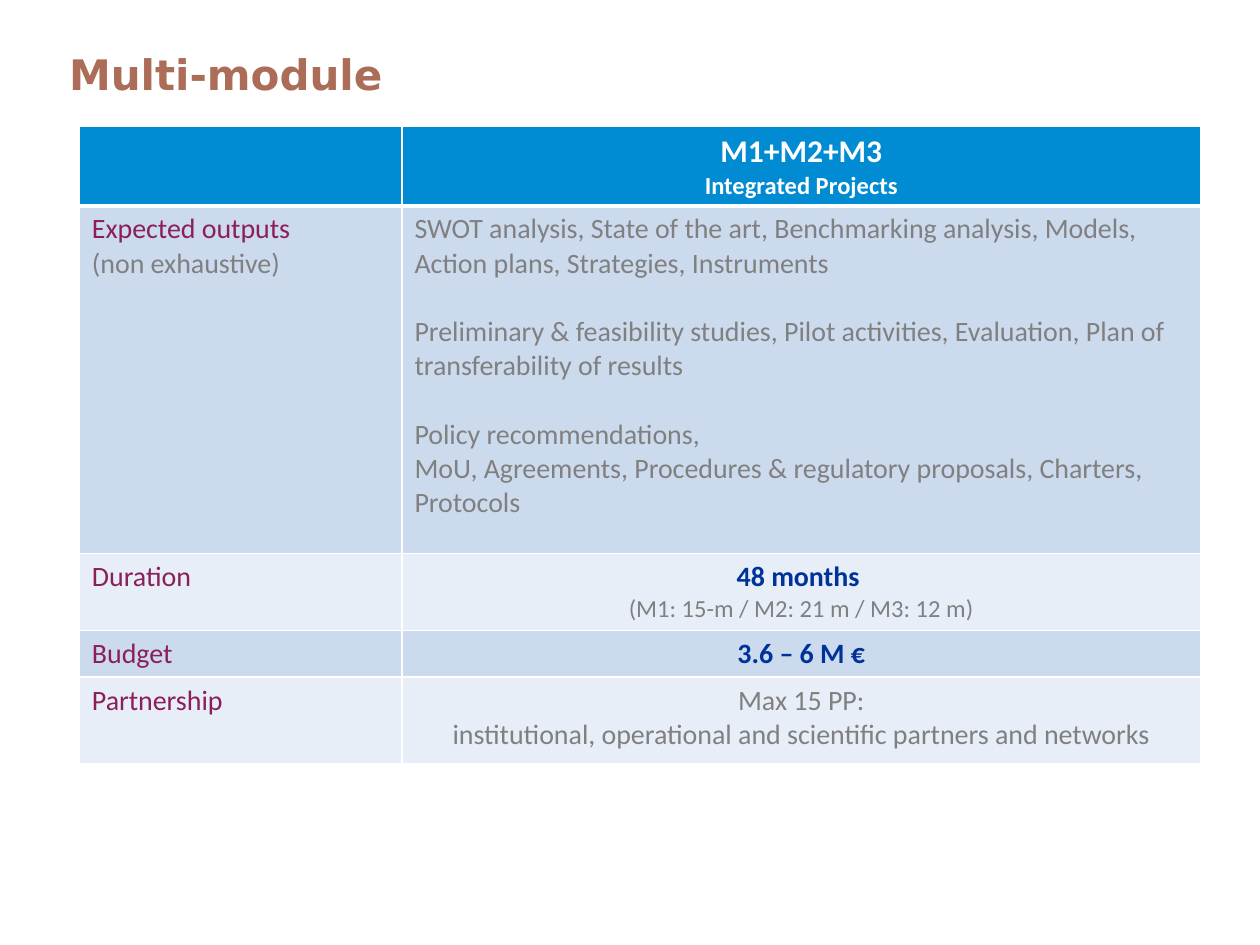
from pptx import Presentation
from pptx import util as u
from pptx.dml.color import RGBColor
from pptx.enum import text
from pptx.oxml.ns import qn
from lxml import etree

W, H = u.Inches(10), u.Inches(7.5)
WHITE = RGBColor(0xFF, 0xFF, 0xFF)
BROWN = RGBColor(0xAB, 0x6D, 0x58)
BLUE = RGBColor(0x00, 0x8B, 0xD2)
NAVY = RGBColor(0x00, 0x33, 0x99)
PLUM = RGBColor(0x8A, 0x1F, 0x5A)
GREY = RGBColor(0x80, 0x80, 0x80)
BANDS = (RGBColor(0xCC, 0xDA, 0xEE), RGBColor(0xE7, 0xEE, 0xF7))
COLUMNS = (2.56, 6.34)
ROWS = (0.63, 2.76, 0.61, 0.37, 0.69)
LINE = 19.5


def line(words, color=GREY, size=16, bold=False, gap=0):
    return words, color, size, bold, gap


HEADER = ([], [line("M1+M2+M3", WHITE, 18, True),
               line("Integrated Projects", WHITE, 14, True)])
OUTPUTS = [
    line("SWOT analysis, State of the art, Benchmarking analysis, Models, "
         "Action plans, Strategies, Instruments"),
    line("Preliminary & feasibility studies, Pilot activities, Evaluation, "
         "Plan of transferability of results", gap=LINE),
    line("Policy recommendations,", gap=LINE),
    line("MoU, Agreements, Procedures & regulatory proposals, Charters, Protocols"),
]
BODY = (
    ([line("Expected outputs", PLUM), line("(non exhaustive)")], OUTPUTS),
    ([line("Duration", PLUM)],
     [line("48 months ", NAVY, bold=True),
      line("(M1: 15-m / M2: 21 m / M3: 12 m)", size=14)]),
    ([line("Budget", PLUM)], [line("3.6 – 6 M €", NAVY, bold=True)]),
    ([line("Partnership", PLUM)],
     [line("Max 15 PP:"),
      line("institutional, operational and scientific partners and networks")]),
)


def write(tf, lines, align, font="Calibri"):
    for i, (words, color, size, bold, gap) in enumerate(lines):
        p = tf.paragraphs[0] if i == 0 else tf.add_paragraph()
        p.text = words
        p.alignment = align
        if gap:
            p.space_before = u.Pt(gap)
        f = p.runs[0].font
        f.name, f.size, f.bold = font, u.Pt(size), bold
        f.color.rgb = color


def add_border(cell, side, width):
    ln = etree.SubElement(cell._tc.get_or_add_tcPr(), qn(f"a:ln{side}"),
                          w=str(u.Pt(width)))
    fill = etree.SubElement(ln, qn("a:solidFill"))
    etree.SubElement(fill, qn("a:srgbClr"), val=str(WHITE))


def fill_cell(cell, lines, color, align, top, bottom):
    for side, width in zip("LRTB", (1, 1, top, bottom)):
        add_border(cell, side, width)
    cell.fill.solid()
    cell.fill.fore_color.rgb = color
    write(cell.text_frame, lines, align)


def add_title(s, words):
    tf = s.shapes.add_textbox(int(W * 0.045), int(H * 0.005),
                              int(W * 0.95), int(H * 0.12)).text_frame
    tf.word_wrap = True
    tf.vertical_anchor = text.MSO_ANCHOR.MIDDLE
    write(tf, [line(words, BROWN, 24, True)], text.PP_ALIGN.LEFT, "DejaVu Sans")
    tf.paragraphs[0].line_spacing = 1.5


def add_module_table(s):
    tbl = s.shapes.add_table(len(ROWS), len(COLUMNS), u.Inches(0.63), u.Inches(1),
                             u.Inches(sum(COLUMNS)), u.Inches(sum(ROWS))).table
    for col, width in zip(tbl.columns, COLUMNS):
        col.width = u.Inches(width)
    for row, height in zip(tbl.rows, ROWS):
        row.height = u.Inches(height)
    for r, contents in enumerate((HEADER, *BODY)):
        color = BANDS[(r - 1) % 2] if r else BLUE
        for c, lines in enumerate(contents):
            left = c == 0 or lines is OUTPUTS
            align = text.PP_ALIGN.LEFT if left else text.PP_ALIGN.CENTER
            fill_cell(tbl.cell(r, c), lines, color, align,
                      3 if r == 1 else 1, 3 if r == 0 else 1)


def main():
    prs = Presentation()
    prs.slide_width, prs.slide_height = W, H
    s = prs.slides.add_slide(prs.slide_layouts[6])
    add_title(s, "Multi-module")
    add_module_table(s)
    prs.save("out.pptx")


if __name__ == "__main__":
    main()
